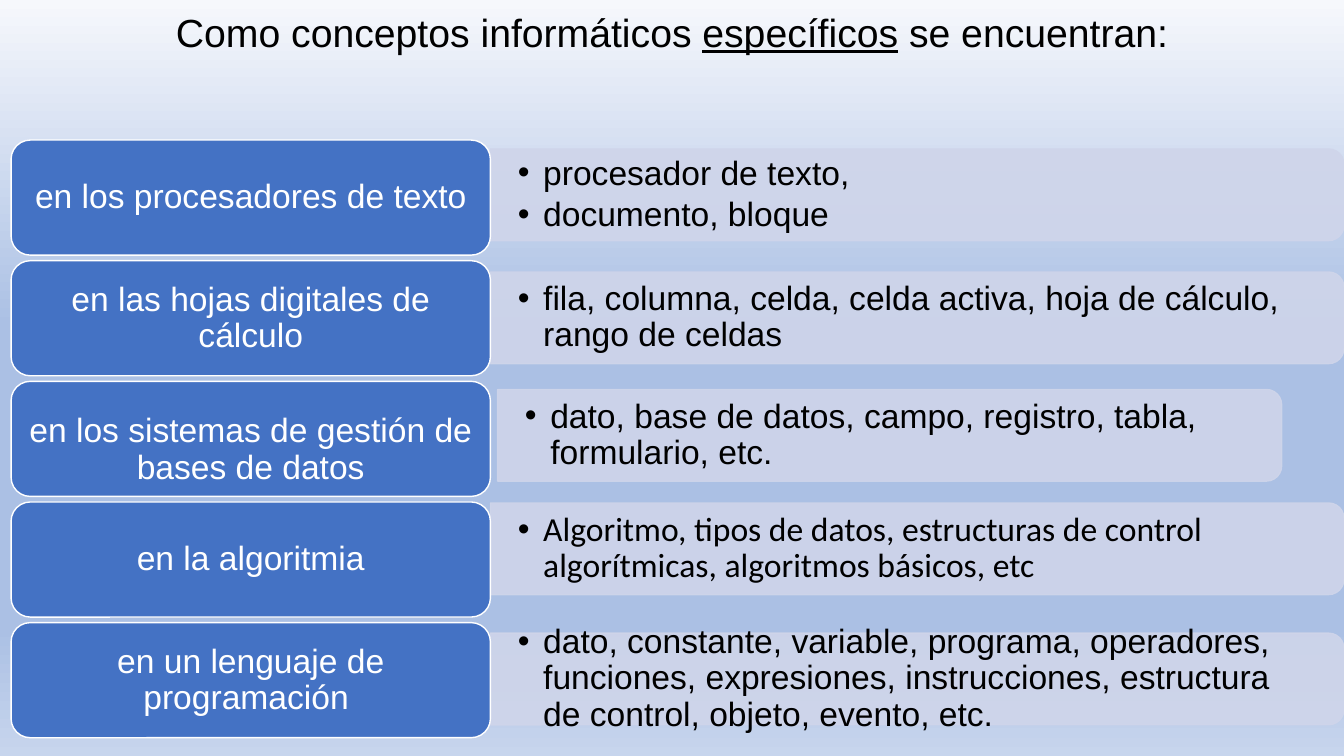
"""Builds a slide of specific computing concepts, one labelled row per field."""
from copy import deepcopy
from dataclasses import dataclass

from pptx import Presentation
from pptx import util as u
from pptx.dml.color import RGBColor
from pptx.enum import shapes, text
from pptx.oxml import ns, xmlchemy


@dataclass(frozen=True)
class Theme:
    """Colours, fonts and type sizes of the slide."""
    ink: str = "000000"
    paper: str = "FFFFFF"
    label: str = "4472C4"
    panel: str = "CFD5EA"
    panel_alpha: int = 90
    background: tuple = ((0, "F6F8FC"), (0.43, "ABC0E4"), (0.83, "ABC0E4"), (1, "C7D5ED"))
    font: str = "Arial"
    alternate_font: str = "Calibri"
    title_size: int = 28
    body_size: int = 24


@dataclass(frozen=True)
class Row:
    """One field: its label, its concepts and the place of its panel in centimetres."""
    label: str
    concepts: tuple
    middle: float
    left: float = 12.36
    width: float = 21.51
    font: str = Theme.font
    label_inset: float = 0.13


THEME = Theme()
LABEL_LEFT, LABEL_TOP, LABEL_PITCH = 0.28, 3.53, 3.04
LABEL_WIDTH, LABEL_HEIGHT = 12.08, 2.9
PANEL_HEIGHT, TEXT_HEIGHT = 2.31, 2.08

ROWS = (
    Row("en los procesadores de texto", ("procesador de texto,", "documento, bloque"), 4.91),
    Row("en las hojas digitales de cálculo",
        ("fila, columna, celda, celda activa, hoja de cálculo, rango de celdas",), 8.01),
    Row("en los sistemas de gestión de bases de datos",
        ("dato, base de datos, campo, registro, tabla, formulario, etc.",), 10.97,
        left=12.54, width=19.76, label_inset=0.69),
    Row("en la algoritmia",
        ("Algoritmo, tipos de datos, estructuras de control algorítmicas, "
         "algoritmos básicos, etc",), 13.83, font=THEME.alternate_font),
    Row("en un lenguaje de programación ",
        ("dato, constante, variable, programa, operadores, funciones, expresiones, "
         "instrucciones, estructura de control, objeto, evento, etc.",), 17.11),
)


def apply_format(target, values):
    """Set each attribute named in values on the target."""
    for name, value in values.items():
        setattr(target, name, value)


def add_element(parent, tag, **attributes):
    """Append an XML element with the given attributes to the parent."""
    element = xmlchemy.OxmlElement(tag)
    for name, value in attributes.items():
        element.set(name, str(value))
    parent.append(element)


def paint_background(slide):
    """Fill the background with the vertical gradient of the theme."""
    fill = slide.background.fill
    fill.gradient()
    fill.gradient_angle = 270
    stop_list = slide.element.find(".//" + ns.qn("a:gsLst"))
    while len(stop_list) < len(THEME.background):
        stop_list.append(deepcopy(stop_list[0]))
    for stop, (position, color) in zip(fill.gradient_stops, THEME.background):
        stop.position = position
        stop.color.rgb = RGBColor.from_string(color)


def add_box(slide, kind, place, fill, line):
    """Add a flat preset shape at a place given in centimetres."""
    shape = slide.shapes.add_shape(kind, *map(u.Cm, place))
    shape.shadow.inherit = False
    shape.fill.solid()
    shape.fill.fore_color.rgb = RGBColor.from_string(fill)
    shape.line.color.rgb = RGBColor.from_string(line)
    shape.line.width = u.Pt(1)
    return shape


def set_frame(shape, anchor, **margins):
    """Prepare the wrapped text frame of a shape and return it."""
    frame = shape.text_frame
    apply_format(frame, {"word_wrap": True, "vertical_anchor": anchor})
    apply_format(frame, {name: u.Cm(value) for name, value in margins.items()})
    return frame


def add_run(paragraph, content, size, color, font=THEME.font, **styles):
    """Add a run of styled text to the paragraph."""
    run = paragraph.add_run()
    run.text = content
    apply_format(run.font, {"name": font, "size": u.Pt(size), **styles})
    run.font.color.rgb = RGBColor.from_string(color)


def add_title(slide):
    """Add the centred heading with its underlined word."""
    box = slide.shapes.add_textbox(*map(u.Cm, (2.33, 0, 29.21, 1.53)))
    paragraph = set_frame(box, text.MSO_ANCHOR.BOTTOM).paragraphs[0]
    apply_format(paragraph, {"alignment": text.PP_ALIGN.CENTER, "line_spacing": 0.9})
    for content, underline in (("Como conceptos informáticos ", False),
                               ("específicos", True), (" se encuentran:", False)):
        add_run(paragraph, content, THEME.title_size, THEME.ink, underline=underline)


def add_panel(slide, row):
    """Add the translucent panel of a row, rounded on its right side."""
    place = (row.left + (row.width - PANEL_HEIGHT) / 2, row.middle - row.width / 2,
             PANEL_HEIGHT, row.width)
    panel = add_box(slide, shapes.MSO_SHAPE.ROUND_2_SAME_RECTANGLE, place,
                    THEME.panel, THEME.panel)
    panel.rotation = 90
    for color in panel.element.spPr.iter(ns.qn("a:srgbClr")):
        add_element(color, "a:alpha", val=THEME.panel_alpha * 1000)


def add_concepts(slide, row):
    """Add the bulleted concepts over the panel of a row."""
    place = (row.left, row.middle - TEXT_HEIGHT / 2, row.width - 0.11, TEXT_HEIGHT)
    box = slide.shapes.add_textbox(*map(u.Cm, place))
    frame = set_frame(box, text.MSO_ANCHOR.MIDDLE, margin_left=0.69, margin_right=0.69,
                      margin_top=0.36, margin_bottom=0.36)
    for index, concept in enumerate(row.concepts):
        paragraph = frame.add_paragraph() if index else frame.paragraphs[0]
        apply_format(paragraph, {"line_spacing": 0.9, "space_after": u.Pt(3.6)})
        properties = paragraph._p.get_or_add_pPr()
        properties.set("marL", str(u.Cm(0.64)))
        properties.set("indent", str(-u.Cm(0.64)))
        add_element(properties, "a:buFont", typeface=THEME.font)
        add_element(properties, "a:buChar", char="•")
        add_run(paragraph, concept, THEME.body_size, THEME.ink, row.font)


def add_label(slide, row, top):
    """Add the rounded label that names a row."""
    label = add_box(slide, shapes.MSO_SHAPE.ROUNDED_RECTANGLE,
                    (LABEL_LEFT, top, LABEL_WIDTH, LABEL_HEIGHT), THEME.label, THEME.paper)
    frame = set_frame(label, text.MSO_ANCHOR.MIDDLE, margin_top=row.label_inset)
    paragraph = frame.paragraphs[0]
    apply_format(paragraph, {"alignment": text.PP_ALIGN.CENTER, "line_spacing": 0.9})
    add_run(paragraph, row.label, THEME.body_size, THEME.paper)


def main():
    """Build the slide and save it."""
    presentation = Presentation()
    apply_format(presentation, {"slide_width": u.Cm(33.87), "slide_height": u.Cm(19.05)})
    slide = presentation.slides.add_slide(presentation.slide_layouts[6])
    paint_background(slide)
    for index, row in enumerate(ROWS):
        add_panel(slide, row)
        add_concepts(slide, row)
        add_label(slide, row, LABEL_TOP + index * LABEL_PITCH)
    add_title(slide)
    presentation.save("out.pptx")


if __name__ == "__main__":
    main()
